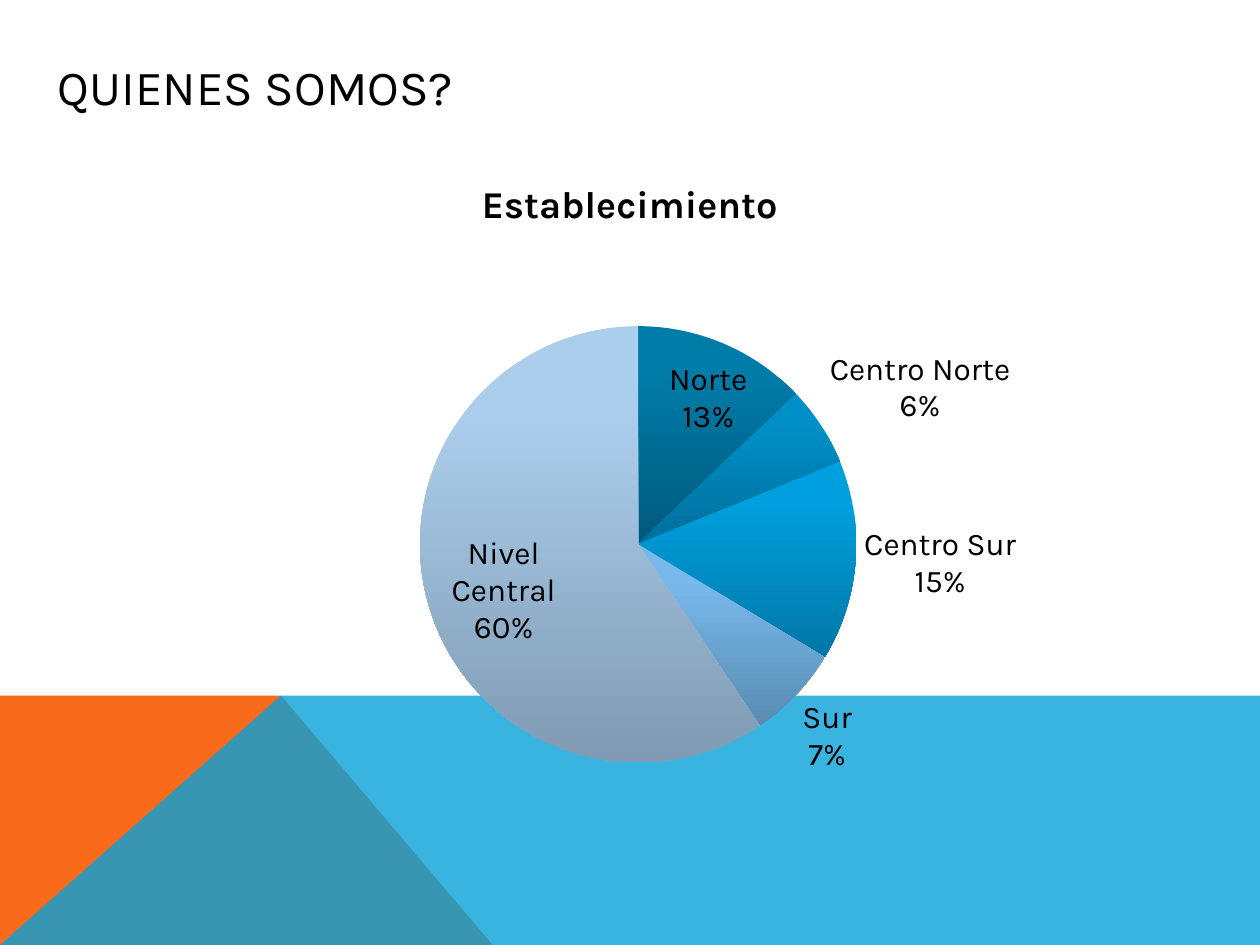
from lxml.etree import SubElement
from pptx import Presentation
from pptx.chart.data import CategoryChartData
from pptx.dml.color import RGBColor
from pptx.enum.chart import XL_CHART_TYPE, XL_LABEL_POSITION as Position
from pptx.enum.text import MSO_ANCHOR
from pptx.oxml import parse_xml
from pptx.oxml.ns import qn
from pptx.util import Inches, Pt

WHITE = RGBColor(0xFF, 0xFF, 0xFF)
BLACK = RGBColor(0x00, 0x00, 0x00)
ORANGE = RGBColor(0xF9, 0x6A, 0x1B)
BLUE = RGBColor(0x08, 0xA1, 0xD9)
CHART_NS = "http://schemas.openxmlformats.org/drawingml/2006/chart"
HORIZON = 0.736
PEAK = 0.223

SLICES = [
    ("Norte", 13, RGBColor(0x00, 0x7C, 0xA9), RGBColor(0x00, 0x5A, 0x7C), Position.INSIDE_END),
    ("Centro Norte", 6, RGBColor(0x00, 0x90, 0xC7), RGBColor(0x00, 0x6E, 0x9C), Position.OUTSIDE_END),
    ("Centro Sur", 15, RGBColor(0x00, 0xA0, 0xDE), RGBColor(0x00, 0x77, 0xA6), Position.OUTSIDE_END),
    ("Sur", 7, RGBColor(0x78, 0xB9, 0xEB), RGBColor(0x58, 0x8C, 0xB2), Position.OUTSIDE_END),
    ("Nivel Central", 60, RGBColor(0xAB, 0xCE, 0xEC), RGBColor(0x80, 0x9A, 0xB3), Position.INSIDE_END),
]
LABEL_OFFSETS = [(0.021, 0.017), (0.002, 0.005), (0.001, 0.003), (0.001, 0), (0.012, 0.061)]


def format_font(font, size, bold=False, color=BLACK, name="Karla"):
    font.name, font.size, font.bold = name, Pt(size), bold
    font.color.rgb = color


def write_text(frame, text, **style):
    for index, line in enumerate(text.split("\n")):
        paragraph = frame.add_paragraph() if index else frame.paragraphs[0]
        run = paragraph.add_run()
        run.text = line
        format_font(run.font, **style)


def manual_layout(inner=False, mode="edge", **shares):
    target = '<c:layoutTarget val="inner"/>' if inner else ""
    modes = "".join(f'<c:{axis}Mode val="{mode}"/>' for axis in "xy")
    sizes = "".join(f'<c:{key} val="{value}"/>' for key, value in shares.items())
    return parse_xml(
        f'<c:layout xmlns:c="{CHART_NS}"><c:manualLayout>'
        f"{target}{modes}{sizes}</c:manualLayout></c:layout>"
    )


def replace_layout(parent, layout, index):
    for old in parent.findall(qn("c:layout")):
        parent.remove(old)
    parent.insert(index, layout)


class SlideBuilder:
    label_size = 18
    title_size = 28
    chart_title_size = 21.6

    def __init__(self, presentation):
        self.width = presentation.slide_width
        self.height = presentation.slide_height
        self.slide = presentation.slides.add_slide(presentation.slide_layouts[6])
        self.slide.background.fill.solid()
        self.slide.background.fill.fore_color.rgb = WHITE

    def box(self, left, top, width, height):
        return (
            int(left * self.width), int(top * self.height),
            int(width * self.width), int(height * self.height),
        )

    def polygon(self, points, color, opacity=100):
        corners = [(int(x * self.width), int(y * self.height)) for x, y in points]
        builder = self.slide.shapes.build_freeform(*corners[0])
        builder.add_line_segments(corners[1:], close=True)
        shape = builder.convert_to_shape()
        shape.shadow.inherit = False
        shape.line.fill.background()
        shape.fill.solid()
        shape.fill.fore_color.rgb = color
        if opacity < 100:
            fill_color = next(shape.element.spPr.iter(qn("a:srgbClr")))
            SubElement(fill_color, qn("a:alpha")).set("val", str(opacity * 1000))

    def title(self, text, *area):
        frame = self.slide.shapes.add_textbox(*self.box(*area)).text_frame
        frame.word_wrap = True
        frame.vertical_anchor = MSO_ANCHOR.MIDDLE
        write_text(frame, text, size=self.title_size)

    def pie(self, title, slices, *area):
        data = CategoryChartData()
        data.categories = [item[0] for item in slices]
        data.add_series("Series 1", [item[1] for item in slices])
        chart = self.slide.shapes.add_chart(XL_CHART_TYPE.PIE, *self.box(*area), data).chart
        format_font(chart.font, self.label_size)
        chart.has_legend = False
        chart.has_title = True
        write_text(chart.chart_title.text_frame, title, size=self.chart_title_size, bold=True)
        chart.plots[0].vary_by_categories = True
        series = chart.plots[0].series[0]
        format_font(series.data_labels.font, self.label_size)
        for point_index, (_, _, top_color, bottom_color, position) in enumerate(slices):
            point = series.points[point_index]
            self.gradient(point.format, top_color, bottom_color)
            point.data_label.position = position
            if point_index < len(slices) - 1:
                format_font(point.data_label.font, self.label_size)
        write_text(point.data_label.text_frame, "Nivel\nCentral\n60%", size=self.label_size)
        self.show_category_and_percent(chart.element)
        for label, (x, y) in zip(chart.element.iter(qn("c:dLbl")), LABEL_OFFSETS):
            replace_layout(label, manual_layout(mode="factor", x=x, y=y), 1)
        chart_title = next(chart.element.iter(qn("c:title")))
        replace_layout(chart_title, manual_layout(x=0.377, y=0.031), 1)
        plot_area = next(chart.element.iter(qn("c:plotArea")))
        replace_layout(plot_area, manual_layout(True, x=0.333, y=0.262, w=0.347, h=0.653), 0)

    def gradient(self, point_format, top_color, bottom_color):
        point_format.line.fill.background()
        fill = point_format.fill
        fill.gradient()
        fill.gradient_angle = 270
        first, last = fill.gradient_stops
        first.color.rgb, last.color.rgb = top_color, bottom_color
        first.position, last.position = 0.2, 1

    def show_category_and_percent(self, chart_space):
        flags = {"c:showVal": "0", "c:showCatName": "1", "c:showPercent": "1", "c:showLeaderLines": "0"}
        for tag, value in flags.items():
            for flag in chart_space.iter(qn(tag)):
                flag.set("val", value)
        for flag in list(chart_space.iter(qn("c:showBubbleSize"))):
            separator = parse_xml(f'<c:separator xmlns:c="{CHART_NS}">\n</c:separator>')
            flag.addnext(separator)


def main():
    presentation = Presentation()
    presentation.slide_width, presentation.slide_height = Inches(10), Inches(7.5)
    builder = SlideBuilder(presentation)
    builder.polygon([(0, 1), (0, HORIZON), (PEAK, HORIZON), (0.391, 1)], ORANGE)
    builder.polygon([(0, 1), (PEAK, HORIZON), (1, HORIZON), (1, 1)], BLUE, opacity=80)
    builder.title("QUIENES SOMOS?", 0.036, 0.017, 0.945, 0.147)
    builder.pie("Establecimiento", SLICES, 0, 0.16, 1, 0.707)
    presentation.save("out.pptx")


if __name__ == "__main__":
    main()
